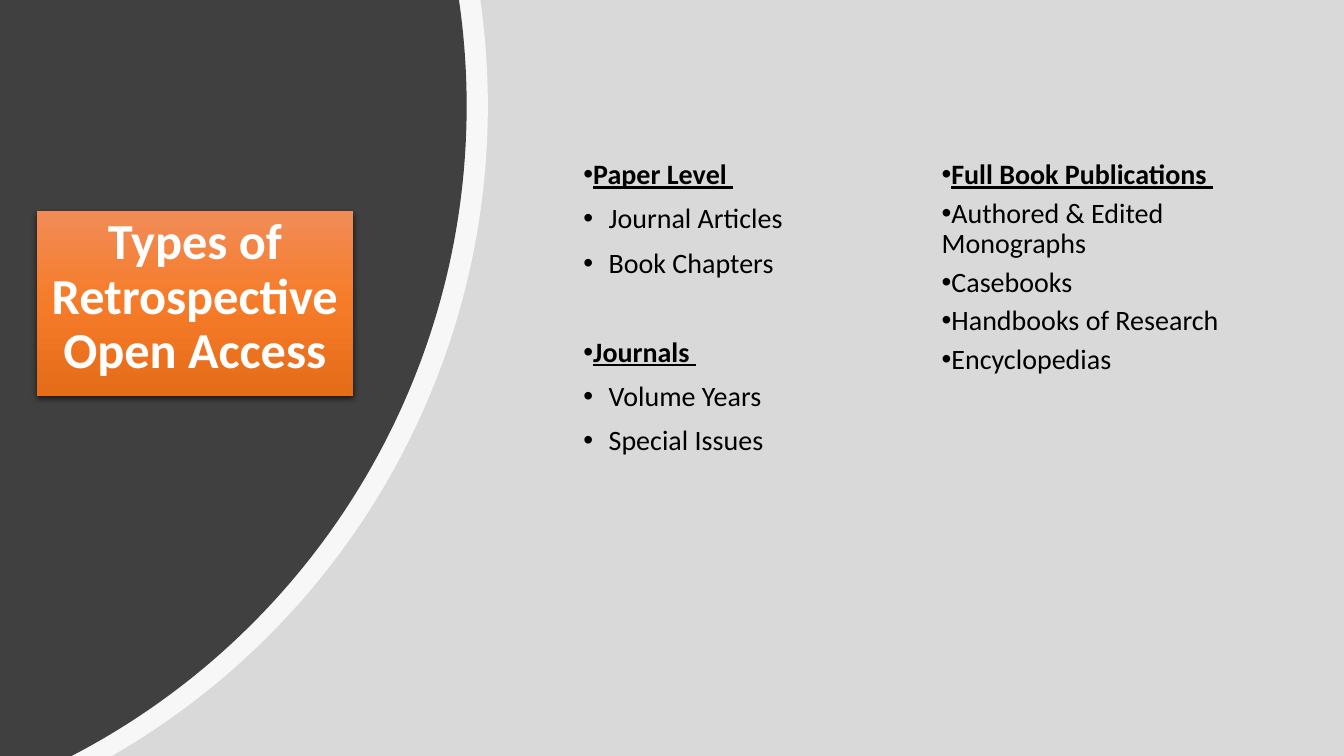
from math import asin, cos, sin, tan

from lxml.etree import SubElement
from pptx import Presentation
from pptx.dml.color import RGBColor
from pptx.enum.shapes import MSO_SHAPE as Shape
from pptx.enum.text import MSO_ANCHOR as Anchor, PP_ALIGN as Align
from pptx.oxml.ns import qn
from pptx.util import Inches, Pt

COLORS = {
    "background": "E2E4D9", "backdrop": "D9D9D9", "rim": "FFFFFF",
    "panel": "404040", "title": "FFFFFF", "text": "000000", "shadow": "000000",
    "top": "F18C57", "middle": "F67B28", "bottom": "E56C19",
}
COLUMNS, ROWS = 40, 22.5
CELL = Inches(1) / 3


class AccessSlide:
    """Draws styled elements on a slide ruled into square grid cells."""

    font_name = "Calibri"

    def __init__(self, presentation):
        presentation.slide_width = round(COLUMNS * CELL)
        presentation.slide_height = round(ROWS * CELL)
        self.slide = presentation.slides.add_slide(presentation.slide_layouts[6])
        self.paint(self.slide.background.fill, "background")

    def paint(self, fill, color):
        fill.solid()
        fill.fore_color.rgb = RGBColor.from_string(COLORS[color])

    def place(self, *cells):
        return [round(cell * CELL) for cell in cells]

    def style(self, paragraph, size, color, bold=False):
        font = paragraph.font
        font.name, font.size, font.bold = self.font_name, Pt(size), bold
        font.color.rgb = RGBColor.from_string(COLORS[color])
        paragraph.line_spacing = 0.9

    def finish(self, shape, color):
        shape.shadow.inherit = False
        shape.line.fill.background()
        self.paint(shape.fill, color)
        return shape

    def rectangle(self, box, color):
        shape = self.slide.shapes.add_shape(Shape.RECTANGLE, *self.place(*box))
        return self.finish(shape, color)

    def round_panel(self, right, radius, color, opacity=100, middle=3.15):
        def on_circle(angle, tangent=0):
            x = right - radius + radius * (cos(angle) - tangent * sin(angle))
            y = middle + radius * (sin(angle) + tangent * cos(angle))
            return self.place(x, y)

        angles = [asin((y - middle) / radius) for y in (0, middle, ROWS)]
        corners = [on_circle(angle) for angle in angles] + [self.place(0, ROWS)]
        builder = self.slide.shapes.build_freeform(0, 0)
        builder.add_line_segments(corners, close=True)
        shape = self.finish(builder.convert_to_shape(), color)
        lines = shape.element.spPr.findall(".//" + qn("a:lnTo"))
        for line, start, end in zip(lines[1:3], angles, angles[1:]):
            reach = 4 / 3 * tan((end - start) / 4)
            curve = line.makeelement(qn("a:cubicBezTo"), {})
            for x, y in (on_circle(start, reach), on_circle(end, -reach), on_circle(end)):
                SubElement(curve, qn("a:pt"), x=str(x), y=str(y))
            line.getparent().replace(line, curve)
        if opacity < 100:
            rgb = shape.element.spPr.find(".//" + qn("a:srgbClr"))
            SubElement(rgb, qn("a:alpha"), val=str(opacity * 1000))

    def title(self, box, text):
        shape = self.rectangle(box, "middle")
        properties = shape.element.spPr
        solid = properties.find(qn("a:solidFill"))
        gradient = properties.makeelement(qn("a:gradFill"), {"rotWithShape": "1"})
        stops = SubElement(gradient, qn("a:gsLst"))
        for position, color in enumerate(("top", "middle", "bottom")):
            stop = SubElement(stops, qn("a:gs"), pos=str(position * 50000))
            SubElement(stop, qn("a:srgbClr"), val=COLORS[color])
        SubElement(gradient, qn("a:lin"), ang="5400000", scaled="0")
        properties.replace(solid, gradient)
        shadow = SubElement(
            properties.find(qn("a:effectLst")), qn("a:outerShdw"),
            blurRad=str(Pt(4.5)), dist=str(Pt(1.5)), dir="5400000", rotWithShape="0",
        )
        rgb = SubElement(shadow, qn("a:srgbClr"), val=COLORS["shadow"])
        SubElement(rgb, qn("a:alpha"), val="63000")
        frame = shape.text_frame
        frame.word_wrap, frame.vertical_anchor = True, Anchor.TOP
        paragraph = frame.paragraphs[0]
        paragraph.text, paragraph.alignment = text, Align.CENTER
        self.style(paragraph, 36, "title", bold=True)

    def bullets(self, box, groups, before=0, after=0, group_gap=0, indent=0):
        frame = self.slide.shapes.add_textbox(*self.place(*box)).text_frame
        frame.word_wrap = True
        lines = [(line, line == group[0]) for group in groups for line in group]
        for index, (line, heading) in enumerate(lines):
            paragraph = frame.add_paragraph() if index else frame.paragraphs[0]
            paragraph.text = line
            self.style(paragraph, 20, "text", bold=heading)
            paragraph.font.underline = heading
            gap = group_gap if heading and index else 0
            paragraph.space_before, paragraph.space_after = Pt(before + gap), Pt(after)
            properties = paragraph._p.get_or_add_pPr()
            properties.set("marL", str(Inches(0 if heading else indent)))
            properties.set("indent", str(Inches(-0.25)))
            bullet_font = properties.makeelement(qn("a:buFont"), {"typeface": "Arial"})
            bullet = properties.makeelement(qn("a:buChar"), {"char": "•"})
            properties.find(qn("a:defRPr")).addprevious(bullet_font)
            bullet_font.addnext(bullet)


def main():
    presentation = Presentation()
    page = AccessSlide(presentation)
    page.rectangle((0, 0, COLUMNS, ROWS), "backdrop")
    page.round_panel(14.52, 22.32, "rim", opacity=80)
    page.round_panel(13.89, 21.8, "panel")
    page.title((1.09, 6.29, 9.42, 5.49), "Types of Retrospective Open Access")
    page.bullets(
        (17.07, 4.63, 9.6, 14.31),
        [
            ["Paper Level ", "Journal Articles", "Book Chapters"],
            ["Journals ", "Volume Years", "Special Issues"],
        ],
        before=10, group_gap=32, indent=0.25,
    )
    page.bullets(
        (27.73, 4.63, 9.6, 14.31),
        [[
            "Full Book Publications ", "Authored & Edited Monographs",
            "Casebooks", "Handbooks of Research", "Encyclopedias",
        ]],
        after=6,
    )
    presentation.save("out.pptx")


if __name__ == "__main__":
    main()
